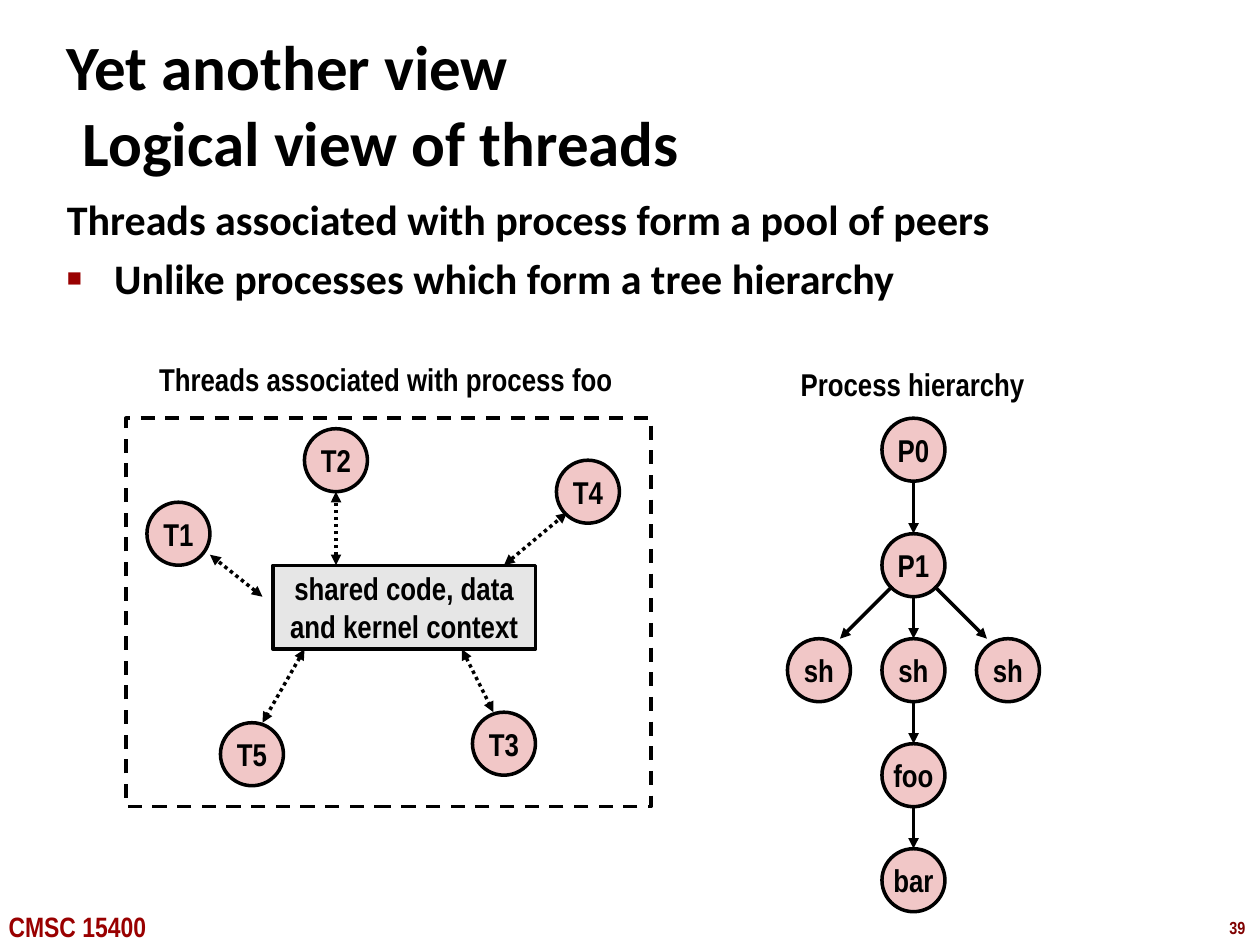
import pptx
import pptx.util
import pptx.dml.color
import pptx.enum.dml
import pptx.enum.shapes
import pptx.enum.text
import pptx.oxml.ns
from lxml import etree

Pt = pptx.util.Pt
qn = pptx.oxml.ns.qn
SHAPE = pptx.enum.shapes.MSO_SHAPE
DASH = pptx.enum.dml.MSO_LINE
CENTER = pptx.enum.text.PP_ALIGN.CENTER
LEFT = pptx.enum.text.PP_ALIGN.LEFT
MIDDLE = pptx.enum.text.MSO_ANCHOR.MIDDLE
NO_FIT = pptx.enum.text.MSO_AUTO_SIZE.NONE

COLORS = {
    "ink": "000000",
    "node": "F1C7C7",
    "shared": "E6E6E6",
    "course": "990000",
    "number": "800000",
}
NODE_SIZE = 36
TRUNK_LEFT = 504
BRANCH_STEP = 54


def rgb(color):
    return pptx.dml.color.RGBColor.from_string(COLORS[color])


def style_text(frame, size=18, font="Arial Narrow", color="ink", align=CENTER):
    for paragraph in frame.paragraphs:
        paragraph.alignment = align
        for run in paragraph.runs:
            run.font.name = font
            run.font.size = Pt(size)
            run.font.bold = True
            run.font.color.rgb = rgb(color)


def style_line(line, dash=None):
    line.color.rgb = rgb("ink")
    line.width = Pt(2)
    if dash is not None:
        line.dash_style = dash


def set_indent(paragraph, margin, hanging):
    properties = paragraph._p.get_or_add_pPr()
    properties.set("marL", str(Pt(margin)))
    properties.set("indent", str(-Pt(hanging)))
    return properties


def place(placeholder, left, top, width, height):
    placeholder.left, placeholder.top = Pt(left), Pt(top)
    placeholder.width, placeholder.height = Pt(width), Pt(height)
    placeholder.text_frame.auto_size = NO_FIT


def add_title(slide, text):
    title = slide.shapes.title
    place(title, 31, 29, 598, 60)
    frame = title.text_frame
    frame.text = text
    frame.vertical_anchor = MIDDLE
    set_indent(frame.paragraphs[0], 9, 9)
    style_text(frame, 36, "Calibri", align=LEFT)


def add_body(slide, statement, contrast):
    body = slide.placeholders[1]
    place(body, 31, 107, 622, 392)
    frame = body.text_frame
    frame.text = f"{statement}\n{contrast}"
    lead, bullet = frame.paragraphs
    etree.SubElement(set_indent(lead, 0, 0), qn("a:buNone"))
    properties = set_indent(bullet, 27, 27)
    bullet_color = etree.SubElement(properties, qn("a:buClr"))
    etree.SubElement(bullet_color, qn("a:srgbClr"), val=COLORS["course"])
    etree.SubElement(properties, qn("a:buSzPct"), val="60000")
    etree.SubElement(properties, qn("a:buChar"), char="■")
    lead.space_before = Pt(0)
    bullet.space_before = Pt(4.8)
    style_text(frame, 24, "Calibri", align=LEFT)


def add_label(slide, text, left, top, width, height, margin=7.2, **style):
    frame = slide.shapes.add_textbox(Pt(left), Pt(top), Pt(width), Pt(height)).text_frame
    frame.text = text
    frame.margin_left = Pt(margin)
    frame.word_wrap = False
    frame.vertical_anchor = MIDDLE
    style_text(frame, **style)


def add_box(slide, kind, left, top, width, height, text="", fill=None, dash=None):
    box = slide.shapes.add_shape(kind, Pt(left), Pt(top), Pt(width), Pt(height))
    box.shadow.inherit = False
    if fill:
        box.fill.solid()
        box.fill.fore_color.rgb = rgb(fill)
    else:
        box.fill.background()
    style_line(box.line, dash)
    box.text_frame.text = text
    box.text_frame.word_wrap = False
    style_text(box.text_frame)


def add_node(slide, name, left, top):
    add_box(slide, SHAPE.OVAL, left, top, NODE_SIZE, NODE_SIZE, name, "node")


def add_arrow(slide, x1, y1, x2, y2, two_way=False):
    arrow = slide.shapes.add_connector(
        pptx.enum.shapes.MSO_CONNECTOR.STRAIGHT, Pt(x1), Pt(y1), Pt(x2), Pt(y2))
    style_line(arrow.line, DASH.ROUND_DOT if two_way else None)
    outline = arrow.line._get_or_add_ln()
    for end in ("a:headEnd", "a:tailEnd") if two_way else ("a:tailEnd",):
        etree.SubElement(outline, qn(end), type="triangle")
    etree.SubElement(arrow._element.spPr, qn("a:effectLst"))


def add_process_tree(slide):
    add_label(slide, "Process hierarchy", 436, 205, 171, 29)
    trunk = [("P0", 239), ("P1", 305), ("sh", 365), ("foo", 425), ("bar", 485)]
    center = TRUNK_LEFT + NODE_SIZE / 2
    for name, top in trunk:
        add_node(slide, name, TRUNK_LEFT, top)
    for (_, parent_top), (_, child_top) in zip(trunk, trunk[1:]):
        add_arrow(slide, center, parent_top + NODE_SIZE, center, child_top)
    for side in (-1, 1):
        add_node(slide, "sh", TRUNK_LEFT + side * BRANCH_STEP, 365)
        add_arrow(slide, center + side * 12, 335, center + side * 42, 365)


def add_thread_pool(slide):
    add_label(slide, "Threads associated with process foo", 55, 202, 331, 29)
    add_box(slide, SHAPE.RECTANGLE, 72, 239, 300, 222, dash=DASH.DASH)
    add_box(slide, SHAPE.RECTANGLE, 156, 323, 150, 48,
            "shared code, data\nand kernel context", "shared")
    threads = [
        ("T1", 84, 287, (150, 341, 120, 317)),
        ("T2", 174, 245, (192, 323, 192, 281)),
        ("T3", 270, 407, (264, 371, 282, 407)),
        ("T4", 318, 263, (288, 323, 324, 293)),
        ("T5", 126, 413, (174, 371, 150, 413)),
    ]
    for name, left, top, link in threads:
        add_node(slide, name, left, top)
        add_arrow(slide, *link, two_way=True)


def main():
    deck = pptx.Presentation()
    deck.slide_width, deck.slide_height = Pt(720), Pt(540)
    slide = deck.slides.add_slide(deck.slide_layouts[1])
    add_title(slide, "Yet another view\vLogical view of threads")
    add_body(slide, "Threads associated with process form a pool of peers",
             "Unlike processes which form a tree hierarchy")
    add_process_tree(slide)
    add_thread_pool(slide)
    add_label(slide, "CMSC 15400", 0, 516, 100, 27, margin=5,
              size=16, color="course", align=LEFT)
    add_label(slide, "39", 695.5, 520.5, 24.5, 19.5,
              size=10, color="number", align=LEFT)
    deck.save("out.pptx")


if __name__ == "__main__":
    main()
